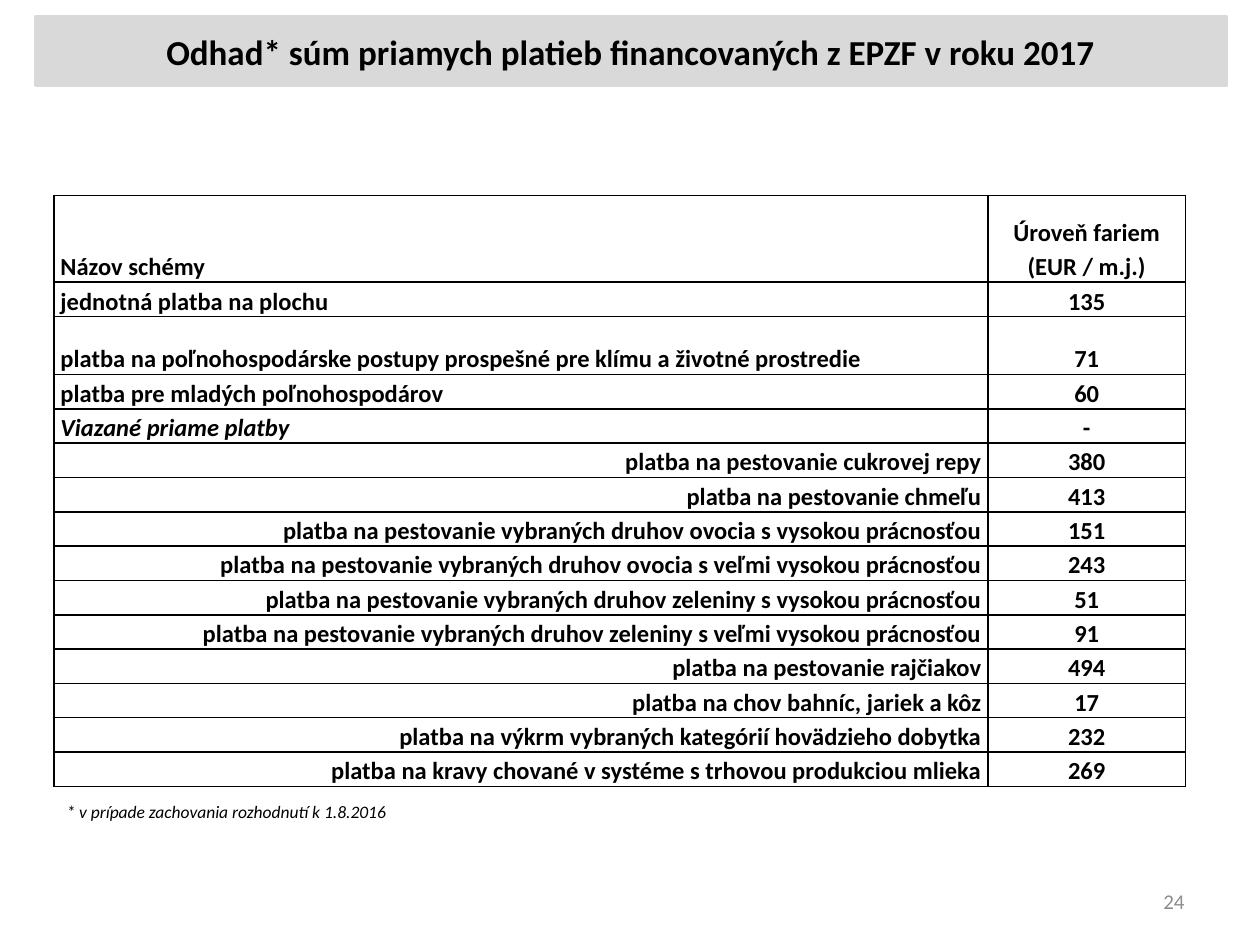
from lxml import etree
from pptx import Presentation
from pptx.dml.color import RGBColor
from pptx.enum.text import MSO_ANCHOR, MSO_AUTO_SIZE, PP_ALIGN
from pptx.oxml.ns import qn
from pptx.util import Inches, Pt

LEFT, CENTER, RIGHT = PP_ALIGN.LEFT, PP_ALIGN.CENTER, PP_ALIGN.RIGHT
TOP, MIDDLE, BOTTOM = MSO_ANCHOR.TOP, MSO_ANCHOR.MIDDLE, MSO_ANCHOR.BOTTOM
NO_FIT = MSO_AUTO_SIZE.NONE

COLORS = {"text": "000000", "band": "D9D9D9", "cell": "FFFFFF",
          "border": "000000", "number": "8C8C8C"}
FONT = "Calibri"
COLS, ROWS = 100, 75

TITLE = "Odhad* súm priamych platieb financovaných z EPZF v roku 2017"
HEADER = ("Názov schémy", "Úroveň fariem\n(EUR / m.j.)")
GENERAL = [
    ("jednotná platba na plochu", "135"),
    ("platba na poľnohospodárske postupy prospešné pre klímu a životné prostredie", "71"),
    ("platba pre mladých poľnohospodárov", "60"),
]
COUPLED_HEADING = ("Viazané priame platby", "-")
COUPLED = [
    ("platba na pestovanie cukrovej repy", "380"),
    ("platba na pestovanie chmeľu", "413"),
    ("platba na pestovanie vybraných druhov ovocia s vysokou prácnosťou", "151"),
    ("platba na pestovanie vybraných druhov ovocia s veľmi vysokou prácnosťou", "243"),
    ("platba na pestovanie vybraných druhov zeleniny s vysokou prácnosťou", "51"),
    ("platba na pestovanie vybraných druhov zeleniny s veľmi vysokou prácnosťou", "91"),
    ("platba na pestovanie rajčiakov", "494"),
    ("platba na chov bahníc, jariek a kôz", "17"),
    ("platba na výkrm vybraných kategórií hovädzieho dobytka", "232"),
    ("platba na kravy chované v systéme s trhovou produkciou mlieka", "269"),
]


def rgb(name):
    return RGBColor.from_string(COLORS[name])


def write(tf, text, size=14, color="text", bold=False, italic=False,
          align=LEFT, spacing=None):
    for i, line in enumerate(text.split("\n")):
        p = tf.add_paragraph() if i else tf.paragraphs[0]
        p.alignment = align
        if spacing:
            p.line_spacing = spacing
        r = p.add_run()
        r.text = line
        r.font.name, r.font.size = FONT, Pt(size)
        r.font.bold, r.font.italic = bold, italic
        r.font.color.rgb = rgb(color)


class SlideBuilder:
    def __init__(self, prs):
        self.dx, self.dy = prs.slide_width / COLS, prs.slide_height / ROWS
        self.s = prs.slides.add_slide(prs.slide_layouts[5])

    def box(self, x, y, w, h):
        return (round(x * self.dx), round(y * self.dy),
                round(w * self.dx), round(h * self.dy))

    def title(self, text, *at):
        sp = self.s.shapes.title
        sp.left, sp.top, sp.width, sp.height = self.box(*at)
        sp.fill.solid()
        sp.fill.fore_color.rgb = rgb("band")
        sp.line.color.rgb = rgb("band")
        sp.line.width = Pt(2)
        tf = sp.text_frame
        tf.auto_size, tf.vertical_anchor = NO_FIT, MIDDLE
        write(tf, text, size=20, bold=True, align=CENTER)

    def text(self, text, *at, anchor=TOP, **style):
        tf = self.s.shapes.add_textbox(*self.box(*at)).text_frame
        tf.word_wrap, tf.vertical_anchor = True, anchor
        write(tf, text, **style)

    def border(self, cell):
        tc_pr = cell._tc.get_or_add_tcPr()
        for i, side in enumerate(("lnL", "lnR", "lnT", "lnB")):
            ln = etree.Element(qn(f"a:{side}"), w=str(Pt(1)))
            fill = etree.SubElement(ln, qn("a:solidFill"))
            etree.SubElement(fill, qn("a:srgbClr"), val=COLORS["border"])
            tc_pr.insert(i, ln)

    def cell(self, cell, text, **style):
        cell.margin_left = cell.margin_right = Inches(0.05)
        cell.margin_top = cell.margin_bottom = 0
        cell.vertical_anchor = BOTTOM
        cell.fill.solid()
        cell.fill.fore_color.rgb = rgb("cell")
        self.border(cell)
        write(cell.text_frame, text, bold=True, spacing=1.15, **style)

    def table(self, rows, x, y, widths, heights):
        at = self.box(x, y, sum(widths), sum(heights))
        table = self.s.shapes.add_table(len(rows), len(widths), *at).table
        for column, width in zip(table.columns, widths):
            column.width = round(width * self.dx)
        for i, ((name, amount), style) in enumerate(rows):
            table.rows[i].height = round(heights[i] * self.dy)
            self.cell(table.cell(i, 0), name, **style)
            self.cell(table.cell(i, 1), amount, align=CENTER)


def main():
    prs = Presentation()
    prs.slide_width, prs.slide_height = Inches(10), Inches(7.5)
    slide = SlideBuilder(prs)
    slide.title(TITLE, 2.8, 1.3, 94.5, 5.5)
    rows = [(row, {}) for row in [HEADER] + GENERAL]
    rows.append((COUPLED_HEADING, {"italic": True}))
    rows += [(row, {"align": RIGHT}) for row in COUPLED]
    heights = [6.9, 2.7, 4.6] + [2.7] * (len(rows) - 3)
    slide.table(rows, 4.3, 15.5, (74.1, 15.7), heights)
    slide.text("* v prípade zachovania rozhodnutí k 1.8.2016",
               4.3, 63.1, 28.3, 2.7, size=10, italic=True)
    slide.text("24", 71.7, 69.5, 23.3, 4, anchor=MIDDLE,
               size=12, color="number", align=RIGHT)
    prs.save("out.pptx")


if __name__ == "__main__":
    main()
